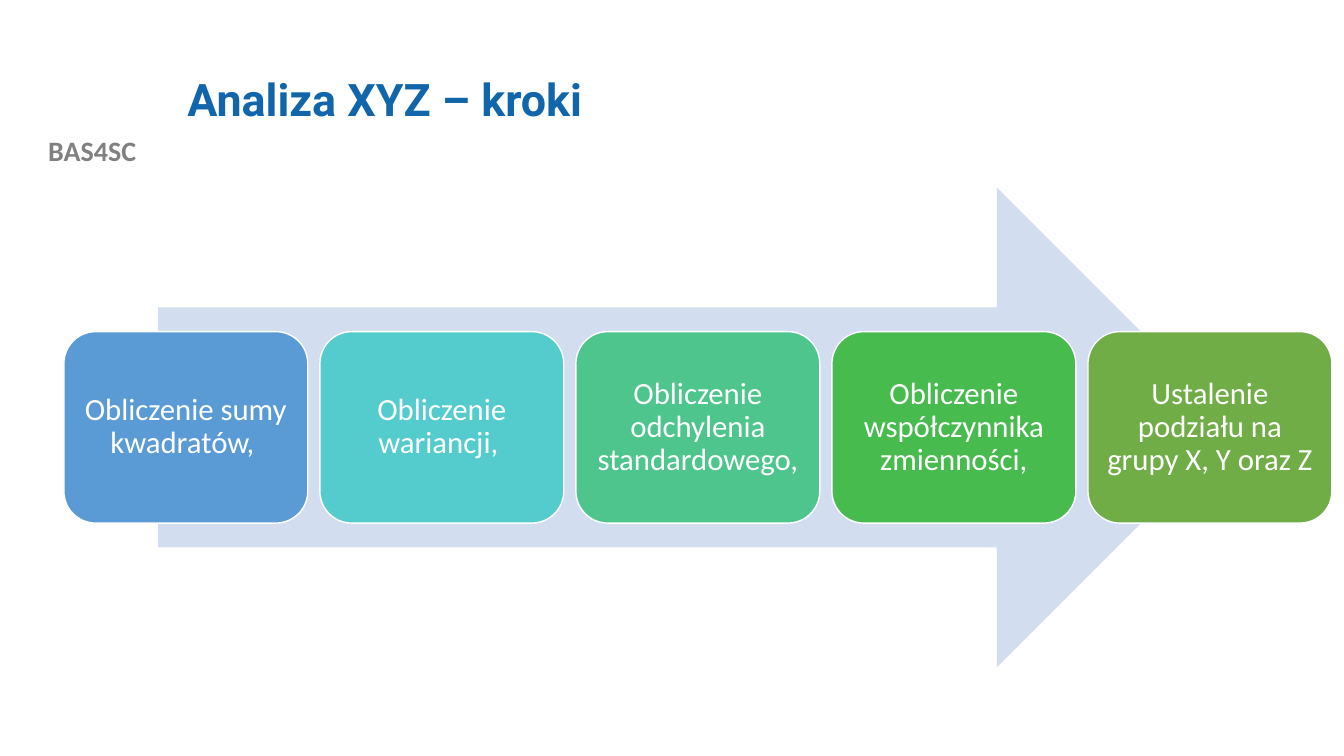
from pptx import Presentation
from pptx.dml.color import RGBColor
from pptx.enum.shapes import MSO_SHAPE
from pptx.enum.text import MSO_ANCHOR, MSO_AUTO_SIZE, PP_ALIGN
from pptx.util import Pt

ARROW = MSO_SHAPE.RIGHT_ARROW
ROUND = MSO_SHAPE.ROUNDED_RECTANGLE
MIDDLE = MSO_ANCHOR.MIDDLE
TOP = MSO_ANCHOR.TOP
FIXED = MSO_AUTO_SIZE.NONE
LEFT = PP_ALIGN.LEFT
CENTER = PP_ALIGN.CENTER

WHITE = RGBColor(0xFF, 0xFF, 0xFF)
GRAY = RGBColor(0x80, 0x80, 0x80)
NAVY = RGBColor(0x10, 0x65, 0xAB)
PALE = RGBColor(0xD2, 0xDE, 0xEF)
BLUE = RGBColor(0x5B, 0x9B, 0xD5)
TEAL = RGBColor(0x54, 0xCC, 0xCD)
MINT = RGBColor(0x4D, 0xC5, 0x8D)
GREEN = RGBColor(0x48, 0xBB, 0x4F)
OLIVE = RGBColor(0x70, 0xAD, 0x47)

HEAD = {"name": "Roboto", "size": Pt(32), "bold": True}
TAG = {"name": "Calibri", "size": Pt(20), "bold": True}
BODY = {"name": "Calibri", "size": Pt(22), "bold": False}

STEPS = [
    ("Obliczenie sumy kwadratów, ", BLUE),
    ("Obliczenie wariancji, ", TEAL),
    ("Obliczenie odchylenia standardowego,", MINT),
    ("Obliczenie współczynnika zmienności,", GREEN),
    ("Ustalenie podziału na grupy X, Y oraz Z", OLIVE),
]
START = 45.6
PITCH = 182.88


def apply(target, values):
    for key, value in values.items():
        setattr(target, key, value)


def place(shape, left, top, width, height):
    apply(shape, {"left": Pt(left), "top": Pt(top),
                  "width": Pt(width), "height": Pt(height)})


def write(shape, text, font, color, align, anchor, lead=0.9):
    frame = shape.text_frame
    frame.text = text
    apply(frame, {"word_wrap": True, "auto_size": FIXED,
                  "vertical_anchor": anchor})
    line = frame.paragraphs[0]
    apply(line, {"alignment": align, "line_spacing": lead})
    apply(line.runs[0].font, font)
    line.runs[0].font.color.rgb = color


def add_form(slide, kind, box, color):
    form = slide.shapes.add_shape(kind, *map(Pt, box))
    form.shadow.inherit = False
    form.fill.solid()
    form.fill.fore_color.rgb = color
    form.line.fill.background()
    return form


def add_step(slide, index, text, color):
    box = (START + index * PITCH, 236.9, 174.24, 136.8)
    step = add_form(slide, ROUND, box, color)
    step.line.color.rgb = WHITE
    step.line.width = Pt(1)
    write(step, text, BODY, WHITE, CENTER, MIDDLE)
    sides = ("left", "top", "right", "bottom")
    apply(step.text_frame, {f"margin_{side}": Pt(6.4) for side in sides})


def main():
    deck = Presentation()
    apply(deck, {"slide_width": Pt(960), "slide_height": Pt(540)})
    slide = deck.slides.add_slide(deck.slide_layouts[5])

    tag = slide.shapes.add_textbox(Pt(0), Pt(92.16), Pt(131.76), Pt(31.68))
    write(tag, "BAS4SC", TAG, GRAY, CENTER, TOP, 1.0)

    title = slide.shapes.title
    place(title, 126.72, 28.8, 767.52, 87.84)
    write(title, "Analiza XYZ – kroki", HEAD, NAVY, LEFT, MIDDLE)

    add_form(slide, ARROW, (113.04, 133.92, 770.4, 342.72), PALE)
    for index, (text, color) in enumerate(STEPS):
        add_step(slide, index, text, color)

    deck.save("out.pptx")


if __name__ == "__main__":
    main()
